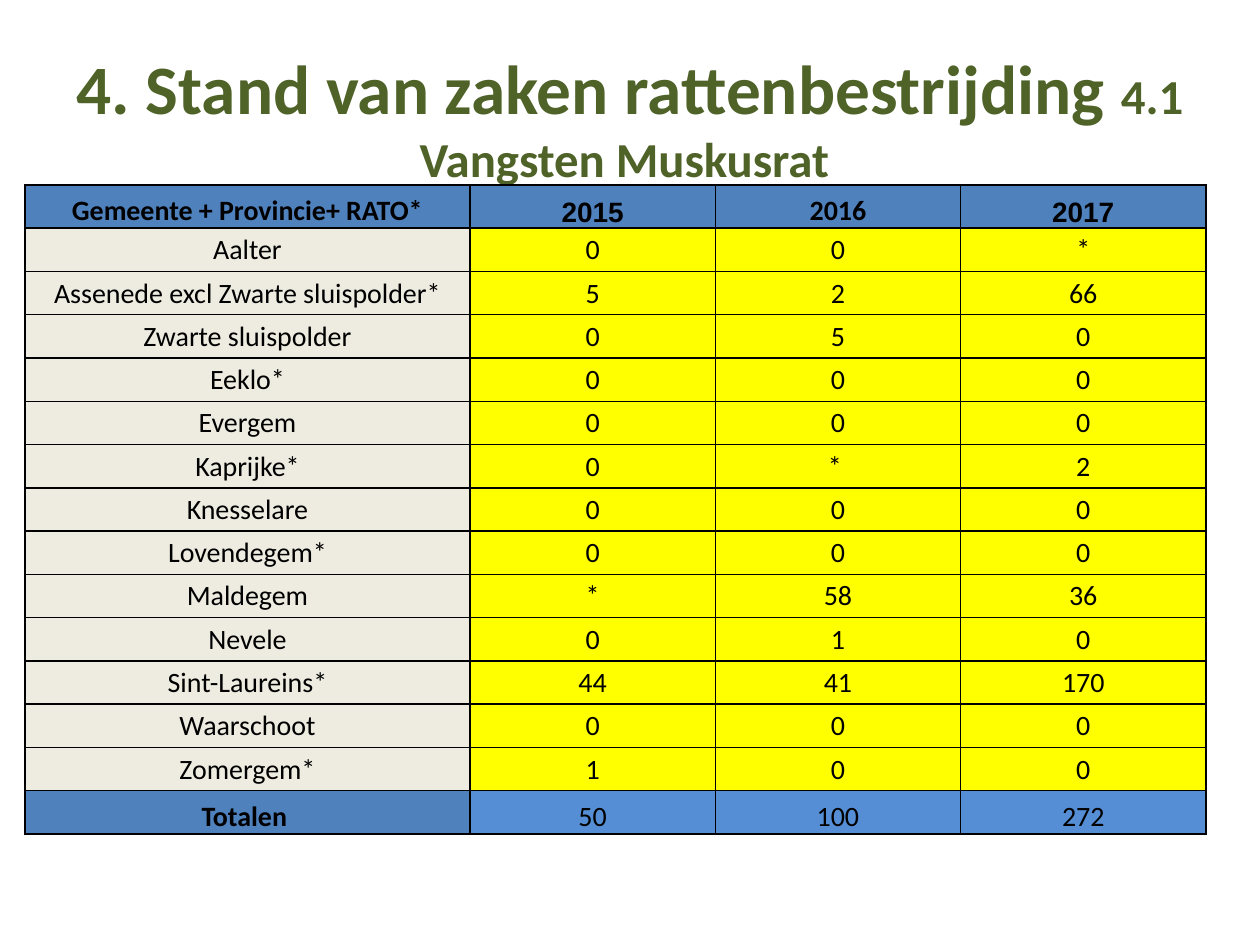
from dataclasses import dataclass

from lxml.etree import SubElement
from pptx import Presentation
from pptx.dml.color import RGBColor
from pptx.enum.text import MSO_ANCHOR as Anchor, PP_ALIGN as Align
from pptx.oxml.ns import qn
from pptx.util import Pt

EMU_PER_PX = 914400 / 126


def px(length: float) -> int:
    return round(length * EMU_PER_PX)


@dataclass(frozen=True)
class Theme:
    title: str = "4F6228"
    ink: str = "000000"
    header: str = "4F81BD"
    label: str = "EEECE1"
    count: str = "FFFF00"
    total: str = "558ED5"
    font: str = "Calibri"
    year_font: str = "Arial"
    title_size: float = 39.6
    subtitle_size: float = 27.9
    table_size: float = 16
    border_width: float = 1


@dataclass(frozen=True)
class CellStyle:
    fill: str
    bold: bool = False
    anchor: Anchor = Anchor.MIDDLE
    font: str = "Calibri"


@dataclass(frozen=True)
class Box:
    left: int
    top: int
    width: int
    height: int


THEME = Theme()
TITLE_BOX = Box(63, 38, 1134, 157)
TABLE_BOX = Box(25, 185, 1181, 649)
LABEL_WIDTH = 445

HEADER = CellStyle(THEME.header, True, Anchor.BOTTOM)
YEAR = CellStyle(THEME.header, True, Anchor.BOTTOM, THEME.year_font)
LABEL = CellStyle(THEME.label)
COUNT = CellStyle(THEME.count)
TOTAL = CellStyle(THEME.total, False, Anchor.BOTTOM)

HEADINGS = ("Gemeente + Provincie+ RATO*", "2015", "2016", "2017")
CATCHES = (
    ("Aalter", "0", "0", "*"),
    ("Assenede excl Zwarte sluispolder*", "5", "2", "66"),
    ("Zwarte sluispolder", "0", "5", "0"),
    ("Eeklo*", "0", "0", "0"),
    ("Evergem", "0", "0", "0"),
    ("Kaprijke*", "0", "* ", "2"),
    ("Knesselare", "0", "0", "0"),
    ("Lovendegem*", "0", "0", "0"),
    ("Maldegem", "*", "58", "36"),
    ("Nevele", "0", "1", "0"),
    ("Sint-Laureins*", "44", "41", "170"),
    ("Waarschoot", "0", "0", "0"),
    ("Zomergem*", "1", "0", "0"),
)
TOTALS = ("Totalen ", "50", "100", "272")

TABLE_ROWS = (
    (HEADINGS, (HEADER, YEAR, HEADER, YEAR)),
    *((catch, (LABEL, COUNT, COUNT, COUNT)) for catch in CATCHES),
    (TOTALS, (HEADER, TOTAL, TOTAL, TOTAL)),
)


def add_run(paragraph, text: str, size: float, color: str, bold: bool,
            font: str = THEME.font) -> None:
    run = paragraph.add_run()
    run.text = text
    run.font.name = font
    run.font.size = Pt(size)
    run.font.bold = bold
    run.font.color.rgb = RGBColor.from_string(color)


def add_title(slide) -> None:
    box = TITLE_BOX
    shape = slide.shapes.add_textbox(px(box.left), px(box.top), px(box.width), px(box.height))
    frame = shape.text_frame
    frame.word_wrap = True
    frame.vertical_anchor = Anchor.MIDDLE
    frame.margin_left = frame.margin_right = 0
    paragraph = frame.paragraphs[0]
    paragraph.alignment = Align.CENTER
    add_run(paragraph, "4. Stand van zaken rattenbestrijding ", THEME.title_size, THEME.title, True)
    add_run(paragraph, "4.1 Vangsten Muskusrat ", THEME.subtitle_size, THEME.title, True)


def add_borders(cell) -> None:
    """Draw all four sides; the lines must precede the fill in the cell properties."""
    properties = cell._tc.get_or_add_tcPr()
    for side in ("a:lnL", "a:lnR", "a:lnT", "a:lnB"):
        line = SubElement(properties, qn(side), w=str(Pt(THEME.border_width)))
        fill = SubElement(line, qn("a:solidFill"))
        SubElement(fill, qn("a:srgbClr"), val=THEME.ink)


def fill_cell(cell, text: str, style: CellStyle) -> None:
    add_borders(cell)
    cell.fill.solid()
    cell.fill.fore_color.rgb = RGBColor.from_string(style.fill)
    cell.margin_left = cell.margin_right = cell.margin_top = px(1)
    cell.margin_bottom = 0
    cell.vertical_anchor = style.anchor
    paragraph = cell.text_frame.paragraphs[0]
    paragraph.alignment = Align.CENTER
    add_run(paragraph, text, THEME.table_size, THEME.ink, style.bold, style.font)


def add_catch_table(slide) -> None:
    box = TABLE_BOX
    table = slide.shapes.add_table(
        len(TABLE_ROWS), len(HEADINGS),
        px(box.left), px(box.top), px(box.width), px(box.height),
    ).table
    table.first_row = table.horz_banding = False

    year_width = (box.width - LABEL_WIDTH) / (len(HEADINGS) - 1)
    for index, column in enumerate(table.columns):
        column.width = px(year_width if index else LABEL_WIDTH)

    for row, (texts, styles) in zip(table.rows, TABLE_ROWS):
        row.height = px(box.height / len(TABLE_ROWS))
        for cell, text, style in zip(row.cells, texts, styles):
            fill_cell(cell, text, style)


def main() -> None:
    presentation = Presentation()
    presentation.slide_width = px(1260)
    presentation.slide_height = px(945)
    slide = presentation.slides.add_slide(presentation.slide_layouts[6])
    add_title(slide)
    add_catch_table(slide)
    presentation.save("out.pptx")


if __name__ == "__main__":
    main()
